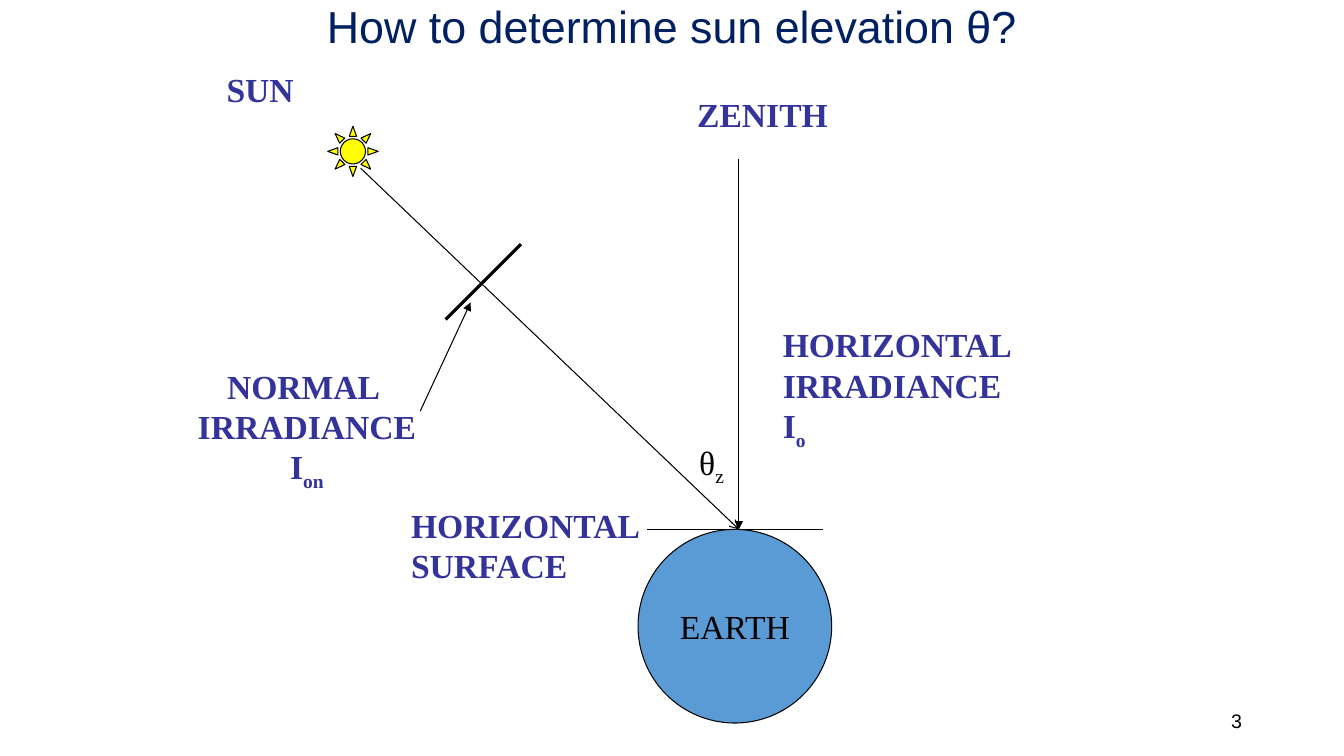
"""Build a slide showing how the sun elevation is determined."""
from dataclasses import dataclass, field
from typing import Any

from lxml import etree
from pptx import Presentation
from pptx.dml.color import RGBColor
from pptx.enum.shapes import MSO_CONNECTOR, MSO_SHAPE
from pptx.enum.text import MSO_ANCHOR, MSO_AUTO_SIZE, PP_ALIGN
from pptx.oxml.ns import qn
from pptx.util import Cm, Pt

STRAIGHT = MSO_CONNECTOR.STRAIGHT
OVAL, SUN = MSO_SHAPE.OVAL, MSO_SHAPE.SUN
LEFT, CENTER, RIGHT = PP_ALIGN.LEFT, PP_ALIGN.CENTER, PP_ALIGN.RIGHT
TOP, MIDDLE = MSO_ANCHOR.TOP, MSO_ANCHOR.MIDDLE
FIT, FIXED = MSO_AUTO_SIZE.SHAPE_TO_FIT_TEXT, MSO_AUTO_SIZE.NONE

BLACK, NAVY, INDIGO = "000000", "002060", "333399"
BLUE, YELLOW = "5B9BD5", "FFFF00"
SERIF, SANS = "Times New Roman", "Arial"

CAPTION = {"name": SERIF, "size": Pt(24), "bold": True}
SYMBOL = {"name": SERIF, "size": Pt(24)}
TITLE = {"name": SANS, "size": Pt(32)}
NUMBER = {"name": SANS, "size": Pt(14)}

Box = tuple[float, float, float, float]
Point = tuple[float, float]


@dataclass
class Label:
    box: Box
    lines: list[str]
    sub: str = ""
    font: dict[str, Any] = field(default_factory=lambda: CAPTION)
    color: str = INDIGO
    align: PP_ALIGN = LEFT
    frame: dict[str, Any] = field(default_factory=dict)


@dataclass
class Line:
    start: Point
    end: Point
    width: float = 0.75
    head: str = ""


@dataclass
class Body:
    kind: MSO_SHAPE
    box: Box
    fill: str


CONTACT = (18.62, 13.34)
EARTH = Body(OVAL, (16.08, 13.34, 4.88, 4.88), BLUE)
SUN_DISC = Body(SUN, (8.26, 3.18, 1.27, 1.27), YELLOW)

LINES = [
    Line((16.31, 13.34), (20.75, 13.34)),
    Line((9.09, 4.24), CONTACT, head="arrow"),
    Line((18.62, 4.01), CONTACT, head="triangle"),
    Line((11.23, 8.05), (13.13, 6.15), width=2.25),
    Line((10.59, 10.36), (11.86, 7.62), head="triangle"),
]

LABELS = [
    Label((17.32, 2.24, 3.81, 1.27), ["ZENITH"], frame={"word_wrap": False}),
    Label((5.46, 1.6, 2.21, 1.27), ["SUN"], frame={"word_wrap": False}),
    Label((19.48, 8.05, 6.55, 3.33), ["HORIZONTAL", "IRRADIANCE I"], "o"),
    Label((4.24, 9.09, 6.99, 3.33), ["NORMAL ", "IRRADIANCE I"], "on", align=CENTER),
    Label((10.11, 12.6, 6.35, 2.31), ["HORIZONTAL", "SURFACE"],
          frame={"word_wrap": False}),
    Label((16.94, 11, 1.9, 1.27), ["θ"], "z", SYMBOL, BLACK,
          frame={"margin_left": Cm(0.68)}),
    Label((4.24, -0.15, 25.4, 1.63), ["How to determine sun elevation θ?"],
          font=TITLE, color=NAVY, align=CENTER),
    Label((23.93, 17.65, 7.62, 1.02), ["3"], font=NUMBER, color=BLACK, align=RIGHT,
          frame={"vertical_anchor": MIDDLE, "auto_size": FIXED}),
]
EARTH_LABEL = Label(EARTH.box, ["EARTH"], font=SYMBOL, color=BLACK, align=CENTER,
                    frame={"word_wrap": False, "vertical_anchor": MIDDLE,
                           "auto_size": FIXED})


def rgb(color: str) -> RGBColor:
    return RGBColor.from_string(color)


def apply(target: Any, values: dict[str, Any]) -> None:
    for name, value in values.items():
        setattr(target, name, value)


def add_run(p: Any, text: str, label: Label) -> Any:
    r = p.add_run()
    r.text = text
    apply(r.font, label.font)
    r.font.color.rgb = rgb(label.color)
    return r


def write(sp: Any, label: Label) -> None:
    tf = sp.text_frame
    apply(tf, {"word_wrap": True, "auto_size": FIT, "vertical_anchor": TOP} | label.frame)
    for i, text in enumerate(label.lines):
        p = tf.add_paragraph() if i else tf.paragraphs[0]
        p.alignment = label.align
        add_run(p, text, label)
    if label.sub:
        r = add_run(p, label.sub, label)
        r.font._element.set("baseline", "-25000")


def add_label(s: Any, label: Label) -> None:
    write(s.shapes.add_textbox(*map(Cm, label.box)), label)


def add_body(s: Any, body: Body) -> Any:
    sp = s.shapes.add_shape(body.kind, *map(Cm, body.box))
    sp.shadow.inherit = False
    sp.fill.solid()
    sp.fill.fore_color.rgb = rgb(body.fill)
    sp.line.color.rgb = rgb(BLACK)
    sp.line.width = Pt(0.75)
    return sp


def add_line(s: Any, line: Line) -> None:
    sp = s.shapes.add_connector(STRAIGHT, *map(Cm, line.start + line.end))
    sp.line.color.rgb = rgb(BLACK)
    sp.line.width = Pt(line.width)
    if line.head:
        etree.SubElement(sp.line._get_or_add_ln(), qn("a:tailEnd"), type=line.head)
    etree.SubElement(sp._element.spPr, qn("a:effectLst"))


def main() -> None:
    prs = Presentation()
    prs.slide_width, prs.slide_height = Cm(33.87), Cm(19.05)
    s = prs.slides.add_slide(prs.slide_layouts[6])
    write(add_body(s, EARTH), EARTH_LABEL)
    add_body(s, SUN_DISC)
    for line in LINES:
        add_line(s, line)
    for label in LABELS:
        add_label(s, label)
    prs.save("out.pptx")


if __name__ == "__main__":
    main()
